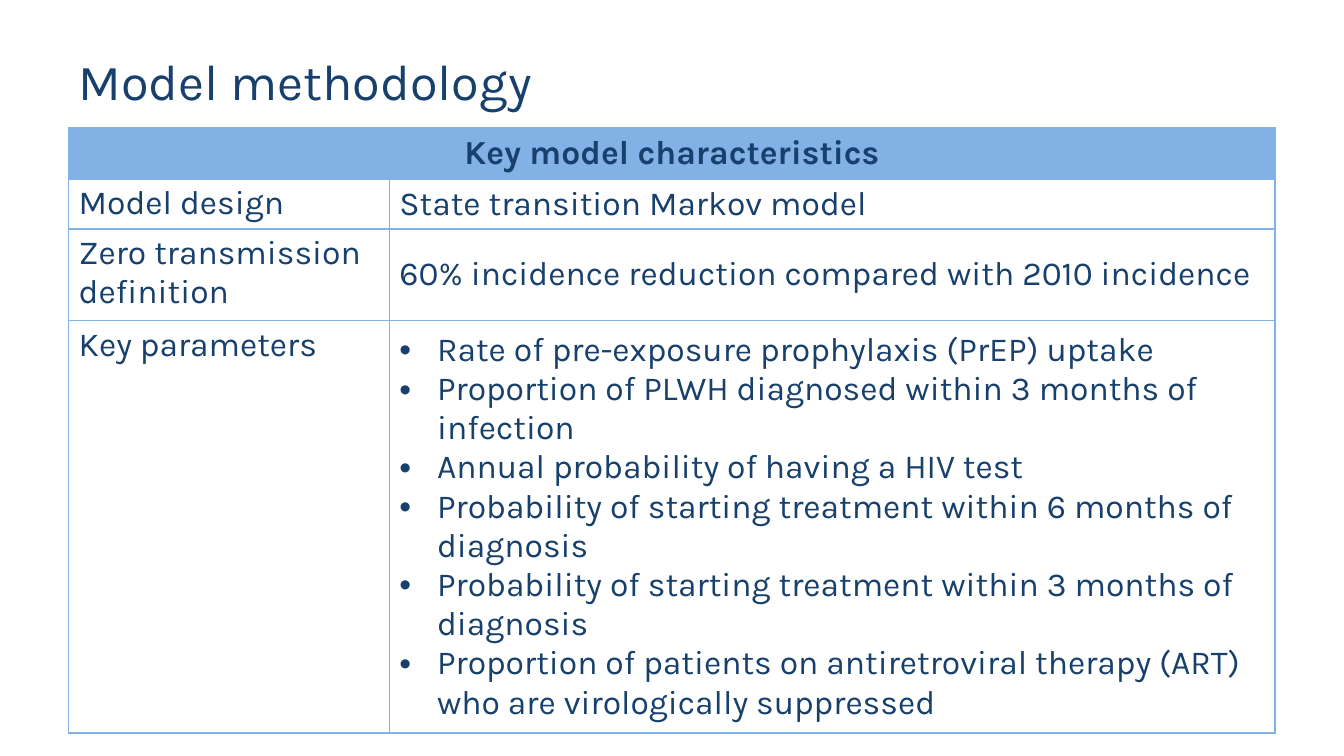
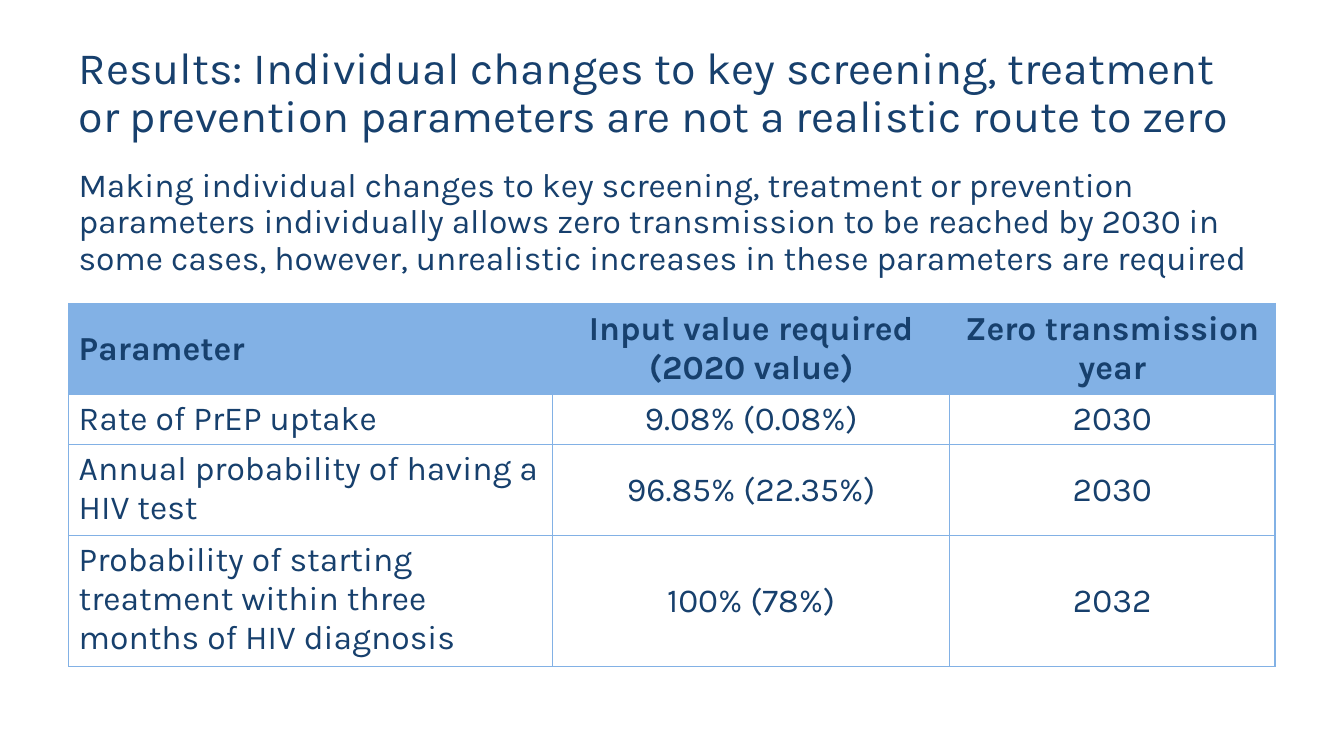
from lxml.etree import SubElement
from pptx import Presentation
from pptx.dml.color import RGBColor
from pptx.enum.text import MSO_ANCHOR as Anchor, MSO_AUTO_SIZE as Fit, PP_ALIGN as Align
from pptx.oxml.ns import qn
from pptx.util import Cm, Pt

NAVY = RGBColor(0x17, 0x40, 0x6D)
SKY = RGBColor(0x82, 0xB1, 0xE5)
FONT = "Karla"
LEFT, WIDTH = Cm(1.73), Cm(30.4)
BODY = 24

MODEL = [
    ["Key model characteristics", ""],
    ["Model design", "State transition Markov model"],
    ["Zero transmission definition", "60% incidence reduction compared with 2010 incidence"],
    ["Key parameters", "\n".join([
        "Rate of pre-exposure prophylaxis (PrEP) uptake",
        "Proportion of PLWH diagnosed within 3 months of infection",
        "Annual probability of having a HIV test",
        "Probability of starting treatment within 6 months of diagnosis",
        "Probability of starting treatment within 3 months of diagnosis",
        "Proportion of patients on antiretroviral therapy (ART) who are virologically suppressed",
    ])],
]
RESULTS = [
    ["Parameter", "Input value required (2020 value)", "Zero transmission year"],
    ["Rate of PrEP uptake", "9.08% (0.08%)", "2030"],
    ["Annual probability of having a HIV test", "96.85% (22.35%)", "2030"],
    ["Probability of starting treatment within three months of HIV diagnosis", "100% (78%)", "2032"],
]


def style(frame, size, bold=False, align=Align.LEFT):
    """Format every run of a text frame."""
    for para in frame.paragraphs:
        para.alignment = align
        for run in para.runs:
            font = run.font
            font.name, font.size, font.bold = FONT, Pt(size), bold
            font.color.rgb = NAVY


def add_page(deck, title, size, height):
    """Add a title-only slide and format its title."""
    page = deck.slides.add_slide(deck.slide_layouts[5])
    shape = page.shapes.title
    shape.left, shape.top, shape.width, shape.height = LEFT, Cm(1.12), WIDTH, height
    frame = shape.text_frame
    frame.text = title
    frame.word_wrap, frame.auto_size = True, Fit.NONE
    frame.vertical_anchor = Anchor.MIDDLE
    frame.paragraphs[0].line_spacing = 0.9
    style(frame, size)
    return page


def add_text(page, text, top, height):
    """Add a full-width paragraph."""
    frame = page.shapes.add_textbox(LEFT, top, WIDTH, height).text_frame
    frame.text = text
    frame.word_wrap = True
    frame.paragraphs[0].line_spacing = 0.9
    style(frame, BODY)


def add_edges(cell):
    """Draw a thin line on all four sides of a cell."""
    props = cell._tc.get_or_add_tcPr()
    for side in ("a:lnL", "a:lnR", "a:lnT", "a:lnB"):
        line = SubElement(props, qn(side), w=str(Pt(1)))
        SubElement(SubElement(line, qn("a:solidFill")), qn("a:srgbClr"), val=str(SKY))


def add_dots(frame):
    """Turn the paragraphs of a text frame into bullets."""
    for para in frame.paragraphs:
        props = para._p.get_or_add_pPr()
        props.set("marL", str(Cm(0.95)))
        props.set("indent", str(-Cm(0.95)))
        SubElement(props, qn("a:buFont"), typeface="Arial")
        SubElement(props, qn("a:buChar"), char="•")


def add_grid(page, rows, top, widths, heights, center=False):
    """Add a table with a filled header row and return it."""
    height = Cm(sum(heights))
    grid = page.shapes.add_table(len(rows), len(widths), LEFT, top, WIDTH, height).table
    grid.horz_banding = False
    for col, width in zip(grid.columns, widths):
        col.width = Cm(width)
    for r, (row, size) in enumerate(zip(rows, heights)):
        grid.rows[r].height = Cm(size)
        for c, text in enumerate(row):
            cell = grid.cell(r, c)
            cell.text = text
            add_edges(cell)
            if r == 0:
                cell.fill.solid()
                cell.fill.fore_color.rgb = SKY
            else:
                cell.fill.background()
            cell.vertical_anchor = Anchor.MIDDLE if r == 0 or c else Anchor.TOP
            align = Align.CENTER if center and c else Align.LEFT
            style(cell.text_frame, BODY, r == 0, align)
    return grid


def add_model(deck):
    """Build the methodology slide."""
    page = add_page(deck, "Model methodology", 36, Cm(2))
    grid = add_grid(page, MODEL, Cm(3.22), [8.08, 22.32], [1.29, 1.26, 2.3, 10.4])
    head = grid.cell(0, 0)
    head.merge(grid.cell(0, 1))
    head.text_frame.paragraphs[0].alignment = Align.CENTER
    add_dots(grid.cell(3, 1).text_frame)


def add_results(deck):
    """Build the results slide."""
    page = add_page(deck, "Results: Individual changes to key screening, treatment or "
                    "prevention parameters are not a realistic route to zero", 32, Cm(2.5))
    add_text(page, "Making individual changes to key screening, treatment or prevention "
             "parameters individually allows zero transmission to be reached by 2030 in "
             "some cases, however, unrealistic increases in these parameters are required",
             Cm(4.12), Cm(3))
    add_grid(page, RESULTS, Cm(7.65), [12.2, 10, 8.2], [2.25, 1.24, 2.22, 3.22], True)


def main():
    """Build and save the deck."""
    deck = Presentation()
    deck.slide_width, deck.slide_height = Cm(33.87), Cm(19.05)
    add_model(deck)
    add_results(deck)
    deck.save("out.pptx")


if __name__ == "__main__":
    main()
